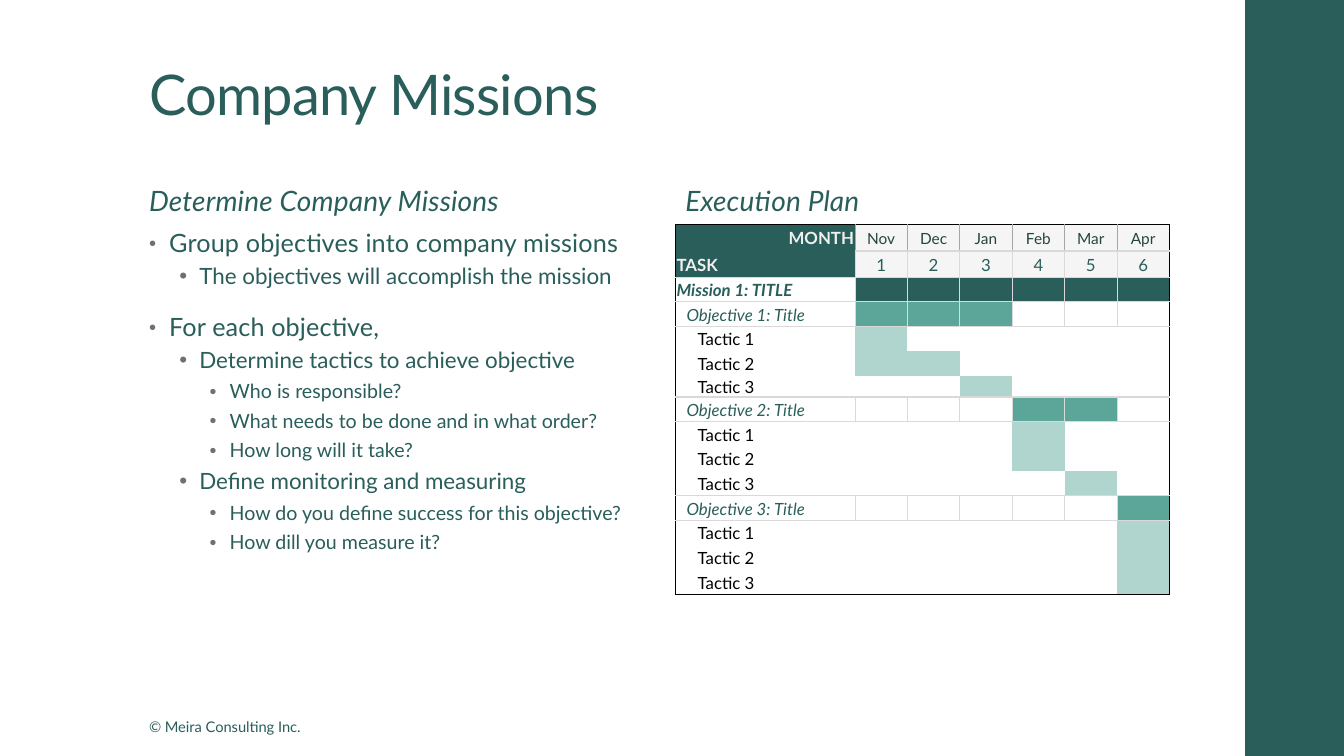
from lxml.etree import SubElement
from pptx import Presentation
from pptx.dml.color import RGBColor
from pptx.enum.shapes import MSO_SHAPE
from pptx.enum.text import MSO_ANCHOR, PP_ALIGN
from pptx.oxml.ns import qn
from pptx.util import Inches, Pt

RECTANGLE = MSO_SHAPE.RECTANGLE
TOP, MIDDLE, BOTTOM = MSO_ANCHOR.TOP, MSO_ANCHOR.MIDDLE, MSO_ANCHOR.BOTTOM
LEFT, CENTER, RIGHT = PP_ALIGN.LEFT, PP_ALIGN.CENTER, PP_ALIGN.RIGHT

TEAL, MID_TEAL, PALE_TEAL = "295E5B", "5BA599", "B0D4CE"
BLACK, GRID, HEADER_GRID, HEADER_FILL = "000000", "D9D9D9", "A6A6A6", "F5F5F5"
BULLET_GREY = "6F6F74"


def rgb(value):
    return RGBColor.from_string(value)


def add_run(paragraph, text, size, color=TEAL, spacing=0, **style):
    """Add Lato text; spacing is in hundredths of a point."""
    run = paragraph.add_run()
    run.text = text
    for name, value in {"name": "Lato", "size": Pt(size), **style}.items():
        setattr(run.font, name, value)
    run.font.color.rgb = rgb(color)
    if spacing:
        run._r.get_or_add_rPr().set("spc", str(spacing))


prs = Presentation()
prs.slide_width, prs.slide_height = Inches(13.33), Inches(7.5)
slide = prs.slides.add_slide(prs.slide_layouts[6])

side_band = slide.shapes.add_shape(RECTANGLE, Inches(12.35), 0, Inches(0.98), Inches(7.5))
side_band.shadow.inherit = False
side_band.fill.solid()
side_band.fill.fore_color.rgb = rgb(TEAL)
side_band.line.fill.background()

# Title, column headings and copyright line
for text, box, anchor, line_spacing, wrap, style in [
    ("© Meira Consulting Inc.", (1.38, 7.07, 1.72, 0.28), TOP, 1.0, False, {"size": 10.5}),
    ("Determine Company Missions", (1.38, 1.41, 4.9, 0.8), BOTTOM, 0.95, True,
     {"size": 20, "italic": True, "spacing": 10}),
    ("Execution Plan", (6.7, 1.41, 4.9, 0.8), BOTTOM, 0.95, True,
     {"size": 20, "italic": True, "spacing": 10}),
    ("Company Missions", (1.38, 0.41, 10.6, 0.91), BOTTOM, 0.9, True,
     {"size": 40, "spacing": -50}),
]:
    frame = slide.shapes.add_textbox(*map(Inches, box)).text_frame
    frame.word_wrap = wrap
    frame.vertical_anchor = anchor
    paragraph = frame.paragraphs[0]
    paragraph.line_spacing = line_spacing
    if anchor == BOTTOM and line_spacing == 0.95:
        paragraph.space_after = Pt(2)
    add_run(paragraph, text, **style)

# Mission steps: indent, size, line spacing, space before, space after, letter spacing, bullet %
STEP_LEVELS = [
    (0.2, 18, 0.95, 14, 2, 10, 80),
    (0.5, 16, 0.9, 3, 3, 0, 100),
    (0.8, 14, 0.9, 3, 3, 0, 100),
]
STEPS = [
    (0, "Group objectives into company missions"),
    (1, "The objectives will accomplish the mission"),
    (0, "For each objective,"),
    (1, "Determine tactics to achieve objective"),
    (2, "Who is responsible?"),
    (2, "What needs to be done and in what order?"),
    (2, "How long will it take?"),
    (1, "Define monitoring and measuring"),
    (2, "How do you define success for this objective?"),
    (2, "How dill you measure it?"),
]
steps_frame = slide.shapes.add_textbox(
    Inches(1.38), Inches(2.23), Inches(4.9), Inches(4.52)).text_frame
steps_frame.word_wrap = True
for index, (level, text) in enumerate(STEPS):
    indent, size, line_spacing, before, after, spacing, bullet_size = STEP_LEVELS[level]
    paragraph = steps_frame.add_paragraph() if index else steps_frame.paragraphs[0]
    paragraph.level = level
    paragraph.line_spacing = line_spacing
    paragraph.space_before = Pt(before if index else 0)
    paragraph.space_after = Pt(after)
    properties = paragraph._p.get_or_add_pPr()
    properties.set("marL", str(Inches(indent)))
    properties.set("indent", str(Inches(-0.2)))
    SubElement(SubElement(properties, qn("a:buClr")), qn("a:srgbClr"), val=BULLET_GREY)
    SubElement(properties, qn("a:buSzPct"), val=str(bullet_size * 1000))
    SubElement(properties, qn("a:buFont"), typeface="Arial")
    SubElement(properties, qn("a:buChar"), char="•")
    add_run(paragraph, text, size, spacing=spacing)

# Execution plan: label, kind, first and last month of the bar
PLAN = [
    ("Mission 1: TITLE", "mission", 1, 6),
    ("Objective 1: Title", "objective", 1, 3),
    ("Tactic 1", "tactic", 1, 1),
    ("Tactic 2", "tactic", 1, 2),
    ("Tactic 3", "tactic", 3, 3),
    ("Objective 2: Title", "objective", 4, 5),
    ("Tactic 1", "tactic", 4, 4),
    ("Tactic 2", "tactic", 4, 4),
    ("Tactic 3", "tactic", 5, 5),
    ("Objective 3: Title", "objective", 6, 6),
    ("Tactic 1", "tactic", 6, 6),
    ("Tactic 2", "tactic", 6, 6),
    ("Tactic 3", "tactic", 6, 6),
]
# Bar colour, label indent, label style
KINDS = {
    "mission": (TEAL, 0.01, {"bold": True, "italic": True}),
    "objective": (MID_TEAL, 0.11, {"italic": True}),
    "tactic": (PALE_TEAL, 0.22, {"color": BLACK}),
}
MONTHS = ["Nov", "Dec", "Jan", "Feb", "Mar", "Apr"]
HEADER_STYLE = {"size": 12, "color": "F1F0EE", "bold": True}

# Each cell: text, alignment, left margin, fill, text style
cells = [
    [("MONTH", RIGHT, 0.11, TEAL, HEADER_STYLE)]
    + [(m, CENTER, 0.01, HEADER_FILL, {"size": 11, "color": "264540"}) for m in MONTHS],
    [("TASK", LEFT, 0.01, TEAL, HEADER_STYLE)]
    + [(str(n), CENTER, 0.01, HEADER_FILL, {"size": 12}) for n in range(1, 7)],
]
for label, kind, first, last in PLAN:
    bar, indent, style = KINDS[kind]
    cells.append(
        [(label, LEFT, indent, None, {"size": 12, **style})]
        + [("", LEFT, 0.01, bar if first <= n <= last else None, {}) for n in range(1, 7)])

row_kinds = ["months", "numbers"] + [kind for _, kind, _, _ in PLAN]
last_row, last_column = len(cells) - 1, len(MONTHS)
plan = slide.shapes.add_table(last_row + 1, last_column + 1, Inches(6.7), Inches(2.23),
                              Inches(4.9), Inches(3.66)).table
plan.first_row = plan.horz_banding = False
for column in range(last_column + 1):
    plan.columns[column].width = Inches(0.52 if column else 1.78)

HEADER_HEIGHT, SHORT_HEIGHT, SHORT_ROW = 0.26, 0.2, 6
task_height = (3.66 - 2 * HEADER_HEIGHT - SHORT_HEIGHT) / (len(PLAN) - 1)
for row, kind in enumerate(row_kinds):
    height = HEADER_HEIGHT if row < 2 else SHORT_HEIGHT if row == SHORT_ROW else task_height
    plan.rows[row].height = Inches(height)
    for column, (text, align, indent, fill, style) in enumerate(cells[row]):
        cell = plan.cell(row, column)
        cell.vertical_anchor = MIDDLE
        for side, margin in {"left": indent, "top": 0.01, "right": 0.01, "bottom": 0}.items():
            setattr(cell, f"margin_{side}", Inches(margin))
        paragraph = cell.text_frame.paragraphs[0]
        paragraph.alignment = align
        if text:
            add_run(paragraph, text, **style)
        else:
            SubElement(paragraph._p, qn("a:endParaRPr"), sz="800")

        # Black frame, grey grid, no grid between tactics or inside the corner
        inner_vertical = {"tactic": None, "months": HEADER_GRID}.get(kind, GRID)
        above = row_kinds[row - 1] if row else None
        below = row_kinds[row + 1] if row < last_row else None
        corner = column == 0
        open_top = kind == above == "tactic" or (corner and kind == "numbers")
        open_bottom = kind == below == "tactic" or (corner and kind == "months")
        borders = {
            "a:lnL": (BLACK, 1) if column == 0 else (inner_vertical, 0.5),
            "a:lnR": (BLACK, 1) if column == last_column else (inner_vertical, 0.5),
            "a:lnT": (BLACK if row == 0 else None if open_top else GRID, 1),
            "a:lnB": (BLACK if row == last_row else None if open_bottom else GRID, 1),
        }
        cell_properties = cell._tc.get_or_add_tcPr()
        for tag, (color, width) in borders.items():
            border = SubElement(cell_properties, qn(tag), w=str(Pt(width)))
            if color:
                SubElement(SubElement(border, qn("a:solidFill")), qn("a:srgbClr"), val=color)
            else:
                SubElement(border, qn("a:noFill"))
        if fill:
            cell.fill.solid()
            cell.fill.fore_color.rgb = rgb(fill)
        else:
            cell.fill.background()

prs.save("out.pptx")
